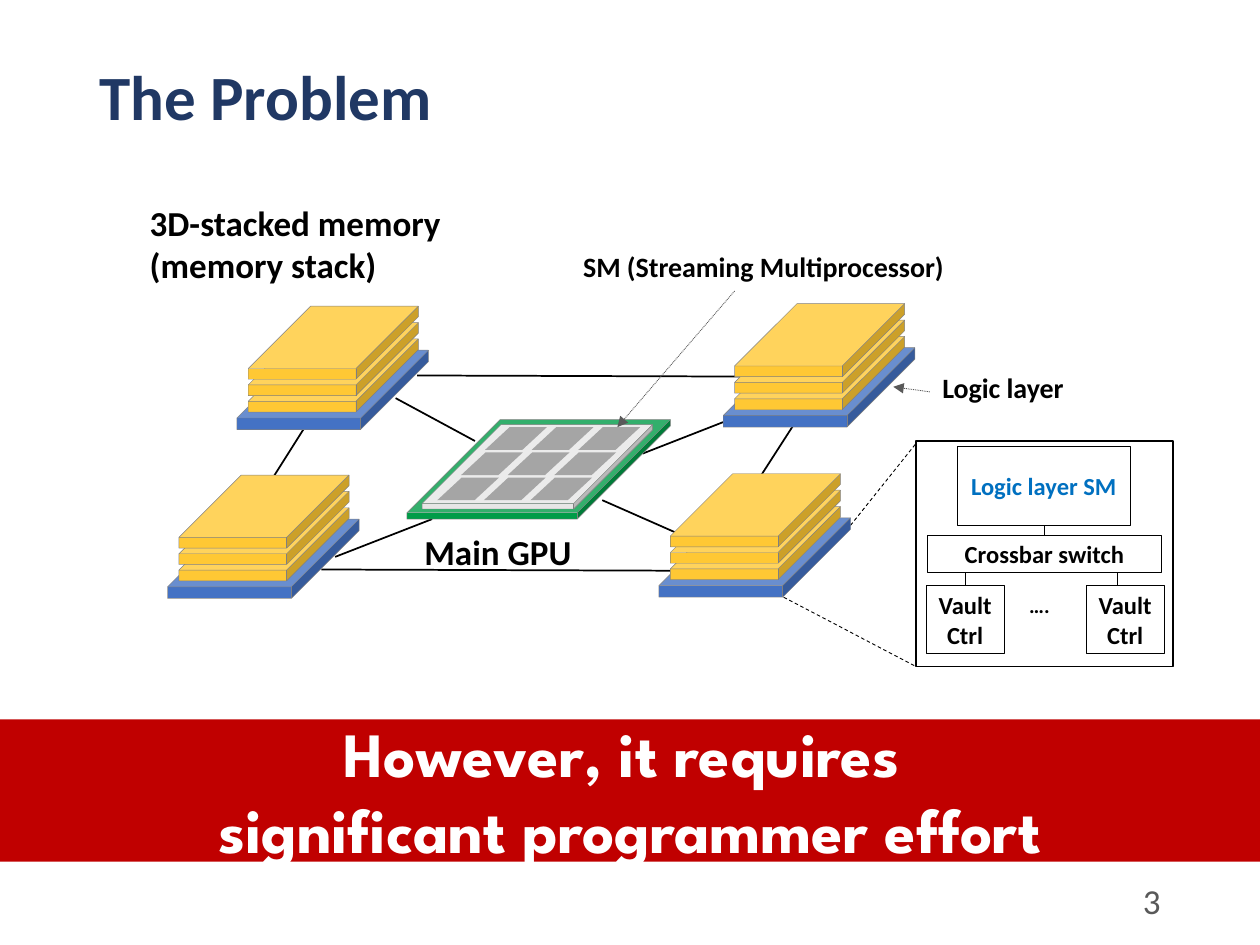
from lxml import etree
from pptx import Presentation
from pptx.dml.color import RGBColor
from pptx.enum.dml import MSO_LINE
from pptx.enum.shapes import MSO_CONNECTOR, MSO_SHAPE
from pptx.enum.text import MSO_ANCHOR, PP_ALIGN
from pptx.oxml.ns import qn
from pptx.util import Inches, Pt

BLACK = RGBColor(0x00, 0x00, 0x00)
WHITE = RGBColor(0xFF, 0xFF, 0xFF)
NAVY = RGBColor(0x20, 0x38, 0x64)
DARK_GRAY = RGBColor(0x59, 0x59, 0x59)
EDGE_GRAY = RGBColor(0x80, 0x80, 0x80)
SM_GRAY = RGBColor(0xA5, 0xA5, 0xA5)
DIE_GRAY = RGBColor(0xE7, 0xE6, 0xE6)
LOGIC_BLUE = RGBColor(0x44, 0x72, 0xC4)
TEXT_BLUE = RGBColor(0x00, 0x70, 0xC0)
MEMORY_YELLOW = RGBColor(0xFF, 0xC8, 0x34)
GPU_GREEN = RGBColor(0x00, 0x9C, 0x48)
BANNER_RED = RGBColor(0xC0, 0x00, 0x00)

presentation = Presentation()
presentation.slide_width = Inches(10)
presentation.slide_height = Inches(7.5)
slide = presentation.slides.add_slide(presentation.slide_layouts[5])


def add_line(start, end, color=BLACK, width=1, dash=None, arrow=False):
    ends = [Inches(value) for value in (*start, *end)]
    line = slide.shapes.add_connector(MSO_CONNECTOR.STRAIGHT, *ends)
    line.line.color.rgb = color
    line.line.width = Pt(width)
    if dash:
        line.line.dash_style = dash
    if arrow:
        etree.SubElement(line.line._get_or_add_ln(), qn("a:tailEnd"), type="triangle")
    etree.SubElement(line._element.spPr, qn("a:effectLst"))


def add_shape(kind, box, fill=None, edge=None, width=0.25, adjustment=None):
    shape = slide.shapes.add_shape(kind, *[Inches(value) for value in box])
    shape.shadow.inherit = False
    if adjustment is not None:
        shape.adjustments[0] = adjustment
    if fill is None:
        shape.fill.background()
    else:
        shape.fill.solid()
        shape.fill.fore_color.rgb = fill
    if edge is None:
        shape.line.fill.background()
    else:
        shape.line.color.rgb = edge
        shape.line.width = Pt(width)
    return shape


# Title
title = slide.shapes.title
title.left, title.top = Inches(0.69), Inches(0.4)
title.width, title.height = Inches(8.62), Inches(0.79)
title.text_frame.text = "The Problem"
title.text_frame.vertical_anchor = MSO_ANCHOR.MIDDLE
title_paragraph = title.text_frame.paragraphs[0]
title_paragraph.alignment = PP_ALIGN.LEFT
title_paragraph.line_spacing = 0.9
title_font = title_paragraph.runs[0].font
title_font.name, title_font.size, title_font.bold = "Calibri", Pt(36), True
title_font.color.rgb = NAVY

# Detail of the logic layer: callout lines, frame and boxes
add_line((6.75, 4.17), (7.27, 3.52), width=0.5, dash=MSO_LINE.DASH)
add_line((6.22, 4.74), (7.27, 5.29), width=0.5, dash=MSO_LINE.DASH)
add_shape(MSO_SHAPE.RECTANGLE, (7.27, 3.5, 2.04, 1.79), edge=BLACK, width=0.75)

text_boxes = [
    ((7.6, 3.54, 1.37, 0.63), "Logic layer SM", 14, "Calibri", TEXT_BLUE, WHITE, BLACK),
    ((7.36, 4.25, 1.86, 0.29), "Crossbar switch", 14, "Calibri", BLACK, WHITE, BLACK),
    ((7.35, 4.65, 0.62, 0.54), "Vault Ctrl", 14, "Calibri", BLACK, WHITE, BLACK),
    ((8.62, 4.65, 0.62, 0.54), "Vault Ctrl", 14, "Calibri", BLACK, WHITE, BLACK),
    ((0, 5.71, 10, 1.13), "However, it requires \nsignificant programmer effort",
     36, "League Spartan", WHITE, BANNER_RED, None),
]
for box, text, size, font_name, color, fill, edge in text_boxes:
    shape = add_shape(MSO_SHAPE.RECTANGLE, box, fill, edge, 0.5)
    frame = shape.text_frame
    frame.word_wrap = True
    frame.margin_left = frame.margin_right = 0
    frame.vertical_anchor = MSO_ANCHOR.MIDDLE
    frame.text = text
    for paragraph in frame.paragraphs:
        paragraph.alignment = PP_ALIGN.CENTER
        font = paragraph.runs[0].font
        font.name, font.size, font.bold = font_name, Pt(size), True
        font.color.rgb = color

for x, top, bottom in [(8.29, 4.17, 4.25), (7.66, 4.54, 4.65), (8.87, 4.54, 4.65)]:
    add_line((x, top), (x, bottom), width=0.5)

# Links between the stacks and the GPU
links = [
    ((2.66, 4.42), (3.43, 4.12)),
    ((5.1, 3.6), (5.74, 3.35)),
    ((2.42, 3.39), (1.87, 4.26)),
    ((6.3, 3.37), (5.74, 4.24)),
    ((2.55, 4.52), (5.52, 4.53)),
    ((3.31, 2.98), (6.27, 2.99)),
    ((3.14, 3.16), (3.77, 3.5)),
    ((4.78, 3.97), (5.96, 4.49)),
]
for start, end in links:
    add_line(start, end)

# Memory stacks: a logic layer under three memory layers
for left, top in [(1.88, 2.78), (1.33, 4.12), (5.74, 2.76), (5.23, 4.11)]:
    add_shape(MSO_SHAPE.CUBE, (left, top, 1.52, 0.63), LOGIC_BLUE, EDGE_GRAY,
              adjustment=0.854)
    for layer in range(3):
        layer_top = top - 0.09 - 0.13 * layer
        add_shape(MSO_SHAPE.CUBE, (left + 0.09, layer_top, 1.35, 0.58),
                  MEMORY_YELLOW, EDGE_GRAY, adjustment=0.854)

# Main GPU with a 3 by 3 grid of SMs
add_shape(MSO_SHAPE.CUBE, (3.23, 3.33, 2.09, 0.79), GPU_GREEN, EDGE_GRAY, adjustment=0.936)
add_shape(MSO_SHAPE.CUBE, (3.35, 3.37, 1.83, 0.67), DIE_GRAY, EDGE_GRAY, adjustment=0.936)
for row in range(3):
    for column in range(3):
        left = 3.85 + 0.37 * column - 0.19 * row
        add_shape(MSO_SHAPE.PARALLELOGRAM, (left, 3.39 + 0.2 * row, 0.49, 0.18),
                  SM_GRAY, adjustment=1.079)

# Label arrows
for start, end in [((7.38, 3.11), (7.09, 3.07)), ((5.83, 2.31), (4.9, 3.39))]:
    add_line(start, end, DARK_GRAY, 0.5, MSO_LINE.ROUND_DOT, arrow=True)

# Labels and slide number
labels = [
    ((8.07, 4.65, 0.47, 0.3), "….", 12, BLACK, True, PP_ALIGN.LEFT),
    ((7.38, 2.89, 1.49, 0.37), "Logic layer", 16, BLACK, True, PP_ALIGN.LEFT),
    ((3.27, 4.16, 1.76, 0.44), "Main GPU", 20, BLACK, True, PP_ALIGN.LEFT),
    ((1.09, 1.55, 3.06, 0.77), "3D-stacked memory\n(memory stack)", 20, BLACK, True,
     PP_ALIGN.LEFT),
    ((4.53, 1.93, 3.7, 0.37), "SM (Streaming Multiprocessor)", 16, BLACK, True,
     PP_ALIGN.LEFT),
    ((7.06, 6.95, 2.25, 0.4), "3", 20, DARK_GRAY, False, PP_ALIGN.RIGHT),
]
for box, text, size, color, bold, alignment in labels:
    label = slide.shapes.add_textbox(*[Inches(value) for value in box])
    frame = label.text_frame
    frame.word_wrap = True
    frame.vertical_anchor = MSO_ANCHOR.MIDDLE
    frame.text = text
    for paragraph in frame.paragraphs:
        paragraph.alignment = alignment
        font = paragraph.runs[0].font
        font.name, font.size, font.bold = "Calibri", Pt(size), bold
        font.color.rgb = color

presentation.save("out.pptx")
